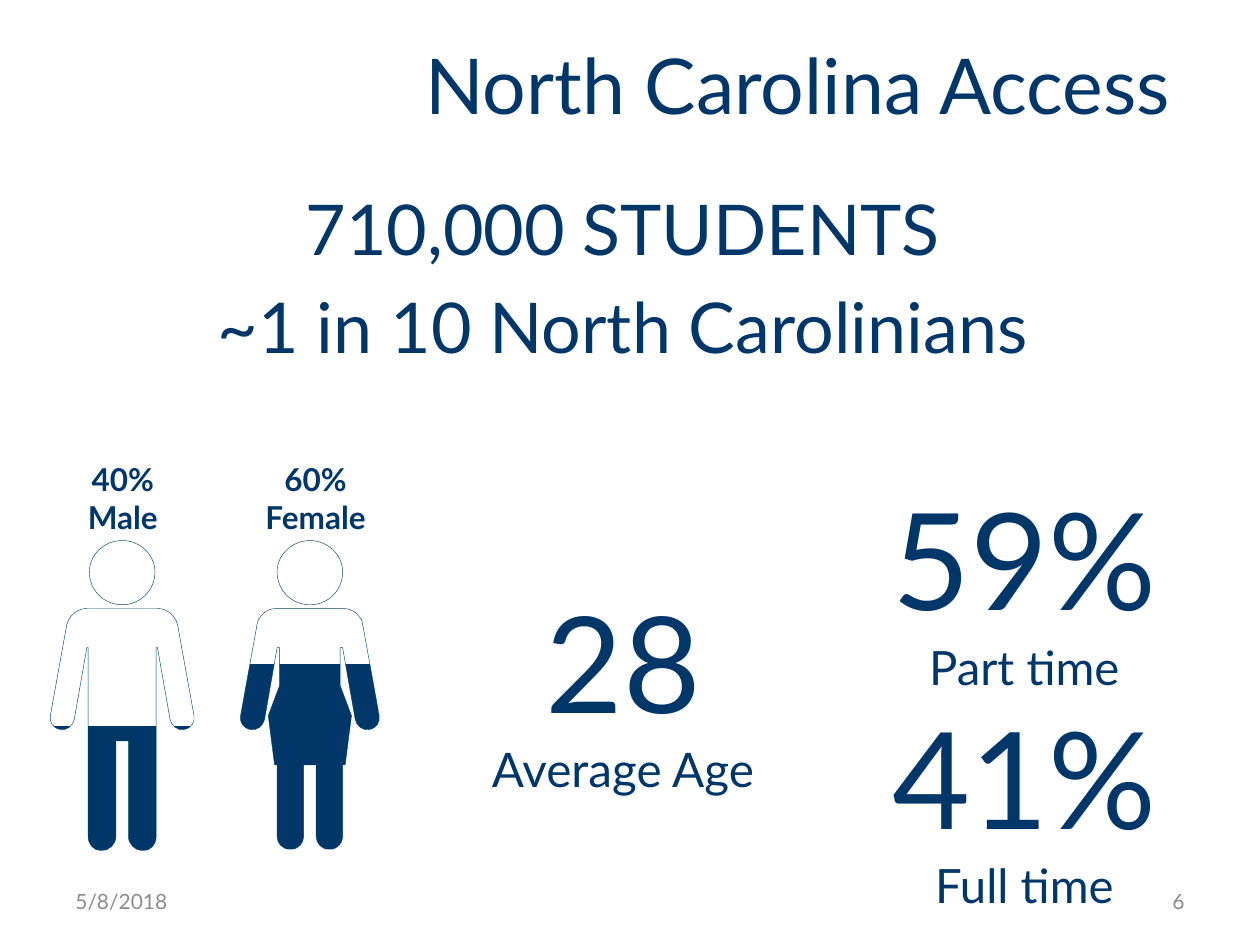
from lxml import etree
from pptx import Presentation
from pptx.dml.color import RGBColor
from pptx.enum import text
from pptx.oxml.ns import qn
from pptx.util import Inches, Pt

NAVY = RGBColor(0x00, 0x37, 0x68)
OUTLINE = RGBColor(0x00, 0x45, 0x68)
GRAY = RGBColor(0x8C, 0x8C, 0x8C)
WHITE = RGBColor(0xFF, 0xFF, 0xFF)
FONT = "Lato"
CENTER, RIGHT, LEFT = text.PP_ALIGN.CENTER, text.PP_ALIGN.RIGHT, text.PP_ALIGN.LEFT
TOP, MIDDLE = text.MSO_ANCHOR.TOP, text.MSO_ANCHOR.MIDDLE

MALE_HALF = [
    [(0.28, 0.54)], [(0.35, 0.54), (0.40, 0.58), (0.43, 0.64)], [(0.44, 0.67)],
    [(0.57, 1.39)], [(0.58, 1.44), (0.55, 1.49), (0.49, 1.50)],
    [(0.44, 1.51), (0.39, 1.47), (0.38, 1.42)], [(0.28, 0.85)], [(0.27, 0.85)],
    [(0.27, 2.35)], [(0.27, 2.41), (0.23, 2.46), (0.17, 2.46)], [(0.16, 2.46)],
    [(0.10, 2.46), (0.05, 2.41), (0.05, 2.35)], [(0.05, 1.59)],
]
FEMALE_HALF = [
    [(0.27, 0.54)], [(0.34, 0.54), (0.38, 0.58), (0.41, 0.63)], [(0.42, 0.67)],
    [(0.55, 1.39)], [(0.56, 1.44), (0.53, 1.49), (0.47, 1.50)],
    [(0.42, 1.51), (0.37, 1.47), (0.36, 1.42)], [(0.26, 0.85)], [(0.24, 0.85)],
    [(0.24, 1.15)], [(0.33, 1.39)], [(0.28, 1.78)], [(0.26, 1.78)], [(0.26, 2.35)],
    [(0.26, 2.40), (0.22, 2.45), (0.16, 2.45)], [(0.15, 2.45)],
    [(0.09, 2.45), (0.05, 2.40), (0.05, 2.35)], [(0.05, 1.78)],
]
HEAD_HALF = [
    [(0, 0)], [(0.14, 0), (0.26, 0.11), (0.26, 0.25)],
    [(0.26, 0.40), (0.14, 0.51), (0, 0.51)],
]


def add_text(slide, box, paragraphs, size, color=NAVY, align=CENTER, anchor=TOP,
             bold=False, gap=0, wrap=True):
    """Place a text box with one paragraph for each string and return it."""
    shape = slide.shapes.add_textbox(*map(Inches, box))
    frame = shape.text_frame
    frame.word_wrap = wrap
    frame.vertical_anchor = anchor
    for index, words in enumerate(paragraphs):
        paragraph = frame.add_paragraph() if index else frame.paragraphs[0]
        paragraph.text = words
        paragraph.alignment = align
        paragraph.space_before = Pt(gap if index else 0)
        font = paragraph.font
        font.name, font.size, font.bold = FONT, Pt(size), bold
        font.color.rgb = color
    return shape


def add_statistics(slide, box, paragraphs, number_size, label_size):
    """Stack large numbers and smaller labels."""
    shape = add_text(slide, box, paragraphs, number_size)
    for paragraph in shape.text_frame.paragraphs:
        for run in paragraph.runs:
            is_number = run.text[0].isdigit()
            run.font.size = Pt(number_size if is_number else label_size)


def mirror_outline(half):
    """Return the steps of a whole outline from its right half."""
    flip = [[(-x, y) for x, y in step] for step in half]
    steps = half + [[flip[-1][-1]]]
    for index in range(len(flip) - 1, 0, -1):
        steps.append(flip[index][-2::-1] + [flip[index - 1][-1]])
    return steps


def bend_lines(shape, steps):
    """Turn the line of each three-point step into a cubic curve."""
    lines = list(shape._element.iter(qn("a:lnTo")))
    for line, step in zip(lines, steps):
        if len(step) == 3:
            line.tag = qn("a:cubicBezTo")
            for index, (x, y) in enumerate(step[:2]):
                point = etree.Element(qn("a:pt"), x=str(x - shape.left), y=str(y - shape.top))
                line.insert(index, point)


def add_person(slide, center, top, half, empty_percent):
    """Draw a symmetrical person filled from the feet up."""
    body, head = (
        [[(Inches(center + x), Inches(top + y)) for x, y in step]
         for step in mirror_outline(outline)]
        for outline in (half, HEAD_HALF))
    builder = slide.shapes.build_freeform(*body[0][0])
    builder.add_line_segments([step[-1] for step in body[1:]])
    builder.move_to(*head[0][0])
    builder.add_line_segments([step[-1] for step in head[1:]])
    shape = builder.convert_to_shape()
    bend_lines(shape, body[1:] + head[1:])
    shape.shadow.inherit = False
    shape.fill.gradient()
    shape.fill.gradient_angle = 270
    for stop, color in zip(shape.fill.gradient_stops, (WHITE, NAVY)):
        stop.color.rgb = color
        stop.position = empty_percent / 100
    shape.line.color.rgb = OUTLINE
    shape.line.width = Pt(0.25)


def add_gender_split(slide, left, top):
    """Place the male and female figures with their labels."""
    add_text(slide, (left, top, 1.31, 0.71), ["40%", "Male"], 18, bold=True)
    add_text(slide, (left + 1.68, top, 1.01, 0.71), ["60%", "Female"], 18,
             bold=True, wrap=False)
    add_person(slide, left + 0.65, top + 0.69, MALE_HALF, 60)
    add_person(slide, left + 2.14, top + 0.69, FEMALE_HALF, 40)


def add_heading(slide, box):
    """Place the slide title."""
    title = add_text(slide, box, ["North Carolina Access"], 44, anchor=MIDDLE)
    title.text_frame.margin_right = Inches(0.26)


def add_footer(slide, left, top, width):
    """Place the date and the slide number at the two ends of the footer."""
    size = (2.33, 0.4)
    add_text(slide, (left, top, *size), ["5/8/2018"], 12, GRAY, LEFT, MIDDLE)
    add_text(slide, (left + width - size[0], top, *size), ["6"], 12, GRAY, RIGHT, MIDDLE)


def main():
    """Build and save the slide."""
    presentation = Presentation()
    presentation.slide_width, presentation.slide_height = Inches(10), Inches(7.5)
    slide = presentation.slides.add_slide(presentation.slide_layouts[6])
    add_heading(slide, (3.08, 0.15, 6.67, 1.03))
    add_text(slide, (0.4, 1.42, 9.08, 2.23),
             ["710,000 STUDENTS", "~1 in 10 North Carolinians"], 40, gap=8)
    add_footer(slide, 0.5, 6.95, 9)
    add_gender_split(slide, 0.32, 3.6)
    add_statistics(slide, (6.91, 3.73, 2.44, 3.9),
                   ["59%\vPart time", "41%", "Full time"], 77, 27)
    add_statistics(slide, (3.75, 4.55, 2.39, 1.49), ["28\vAverage Age"], 76.5, 27.2)
    presentation.save("out.pptx")


if __name__ == "__main__":
    main()
